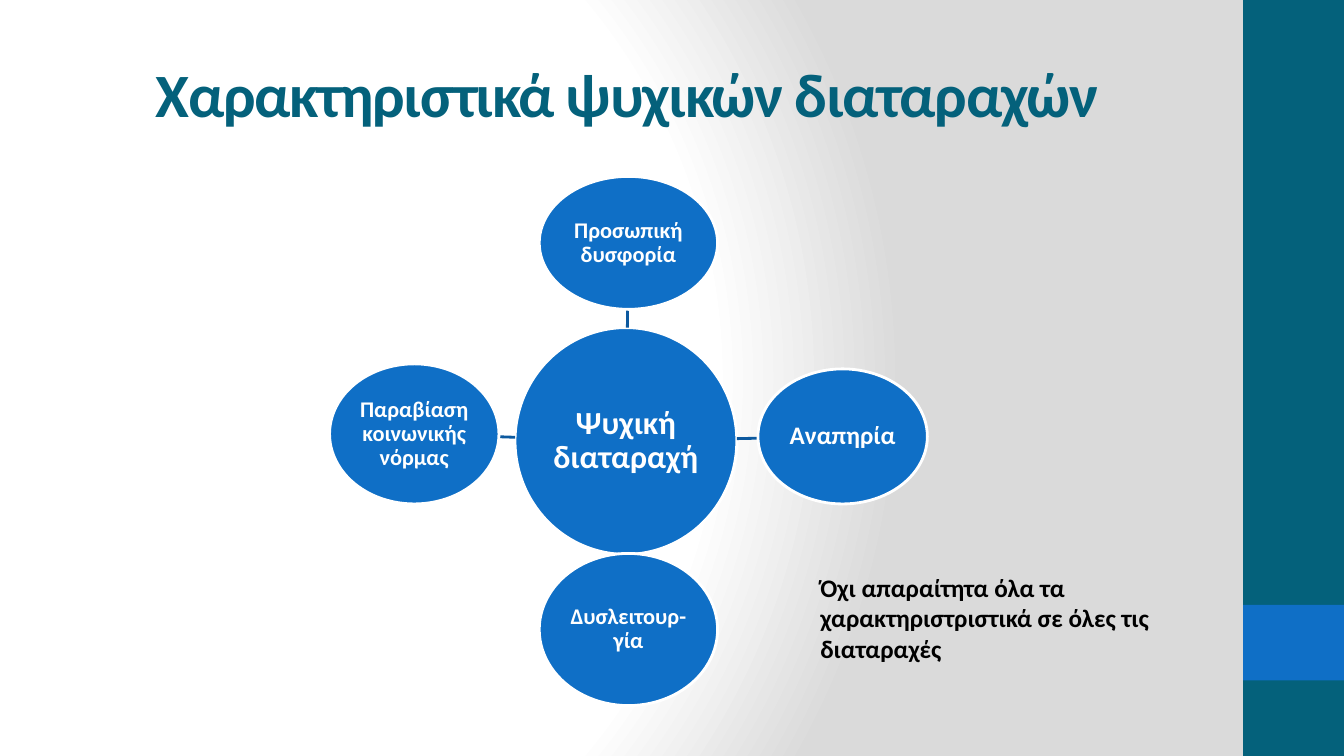
from dataclasses import dataclass
from math import hypot

from lxml import etree
from pptx import Presentation
from pptx.dml.color import RGBColor
from pptx.enum import shapes, text
from pptx.oxml import parse_xml
from pptx.oxml.ns import nsdecls, qn
from pptx.util import Pt


@dataclass(frozen=True)
class Theme:
    font: str = "Calibri"
    teal: str = "04617B"
    blue: str = "0F6FC6"
    navy: str = "0C599F"
    white: str = "FFFFFF"
    grey: str = "DADADA"
    black: str = "000000"
    title: int = 44
    hub: int = 23
    large: int = 18
    small: int = 16
    line: int = 2


THEME = Theme()
HUB = ("Ψυχική διαταραχή", 367.9, 234, 158.4, 162, THEME.hub)
NODES = [
    ("Προσωπική δυσφορία", 385.2, 126, 127.4, 95, THEME.small),
    ("Αναπηρία", 541.4, 263.5, 121, 96.5, THEME.large),
    ("Δυσλειτουρ-γία", 385.2, 395.3, 127.4, 108.7, THEME.small),
    ("Παραβίαση κοινωνικής νόρμας", 235.4, 259.9, 121, 100.1, THEME.small),
]


def rgb(code):
    return RGBColor.from_string(code)


def set_back(slide):
    """Fill the background with a circular white to grey gradient."""
    slide.background.fill.gradient()
    old = slide.element.find(".//" + qn("a:gradFill"))
    stops = [(0, THEME.white), (75, THEME.white), (100, THEME.grey)]
    marks = "".join(
        f'<a:gs pos="{pos * 1000}"><a:srgbClr val="{code}"/></a:gs>'
        for pos, code in stops
    )
    new = parse_xml(
        f'<a:gradFill {nsdecls("a")} rotWithShape="1"><a:gsLst>{marks}</a:gsLst>'
        '<a:path path="circle"><a:fillToRect l="20000" t="50000" r="100000" '
        'b="50000"/></a:path></a:gradFill>'
    )
    old.getparent().replace(old, new)


def add_form(slide, kind, box, fill):
    form = slide.shapes.add_shape(kind, *map(Pt, box))
    form.shadow.inherit = False
    form.fill.solid()
    form.fill.fore_color.rgb = rgb(fill)
    form.line.fill.background()
    return form


def set_text(shape, words, size, color, align, inset=None):
    frame = shape.text_frame
    frame.word_wrap = True
    frame.text = words
    if inset is not None:
        frame.margin_left = frame.margin_right = Pt(inset)
        frame.margin_top = frame.margin_bottom = Pt(inset)
    para = frame.paragraphs[0]
    para.alignment = align
    font = para.runs[0].font
    font.name, font.size, font.bold = THEME.font, Pt(size), True
    font.color.rgb = rgb(color)
    return para


def add_label(slide, words, box, size, color, align):
    label = slide.shapes.add_textbox(*map(Pt, box))
    return label, set_text(label, words, size, color, align)


def add_node(slide, node):
    words, *box, size = node
    oval = add_form(slide, shapes.MSO_SHAPE.OVAL, box, THEME.blue)
    oval.line.color.rgb = rgb(THEME.white)
    oval.line.width = Pt(THEME.line)
    oval.text_frame.vertical_anchor = text.MSO_ANCHOR.MIDDLE
    para = set_text(oval, words, size, THEME.white, text.PP_ALIGN.CENTER, 1)
    para.line_spacing = 0.9


def center(node):
    _, left, top, wide, high, _ = node
    return left + wide / 2, top + high / 2


def edge(node, goal):
    """Return the point where the oval's rim faces the goal's center."""
    (x, y), (to_x, to_y) = center(node), center(goal)
    dx, dy = to_x - x, to_y - y
    part = 1 / hypot(2 * dx / node[3], 2 * dy / node[4])
    return x + dx * part, y + dy * part


def add_link(slide, node):
    ends = edge(HUB, node) + edge(node, HUB)
    link = slide.shapes.add_connector(
        shapes.MSO_CONNECTOR.STRAIGHT, *map(Pt, ends)
    )
    link.line.color.rgb = rgb(THEME.navy)
    link.line.width = Pt(THEME.line)
    etree.SubElement(link.element.spPr, qn("a:effectLst"))


def main():
    deck = Presentation()
    deck.slide_width, deck.slide_height = Pt(960), Pt(540)
    slide = deck.slides.add_slide(deck.slide_layouts[6])
    set_back(slide)

    rect = shapes.MSO_SHAPE.RECTANGLE
    add_form(slide, rect, (888, 0, 72, 540), THEME.teal)
    add_form(slide, rect, (888, 432, 72, 54), THEME.blue)

    title, para = add_label(
        slide, "Χαρακτηριστικά ψυχικών διαταραχών", (48, 21.6, 800, 90),
        THEME.title, THEME.teal, text.PP_ALIGN.CENTER,
    )
    title.text_frame.vertical_anchor = text.MSO_ANCHOR.MIDDLE
    para.runs[0].font._element.set("spc", "-100")

    add_node(slide, HUB)
    for node in NODES:
        add_link(slide, node)
        add_node(slide, node)

    add_label(
        slide, "Όχι απαραίτητα όλα τα χαρακτηριστριστικά σε όλες τις διαταραχές",
        (578.9, 405.4, 280, 72.7), THEME.large, THEME.black, text.PP_ALIGN.LEFT,
    )
    deck.save("out.pptx")


if __name__ == "__main__":
    main()
